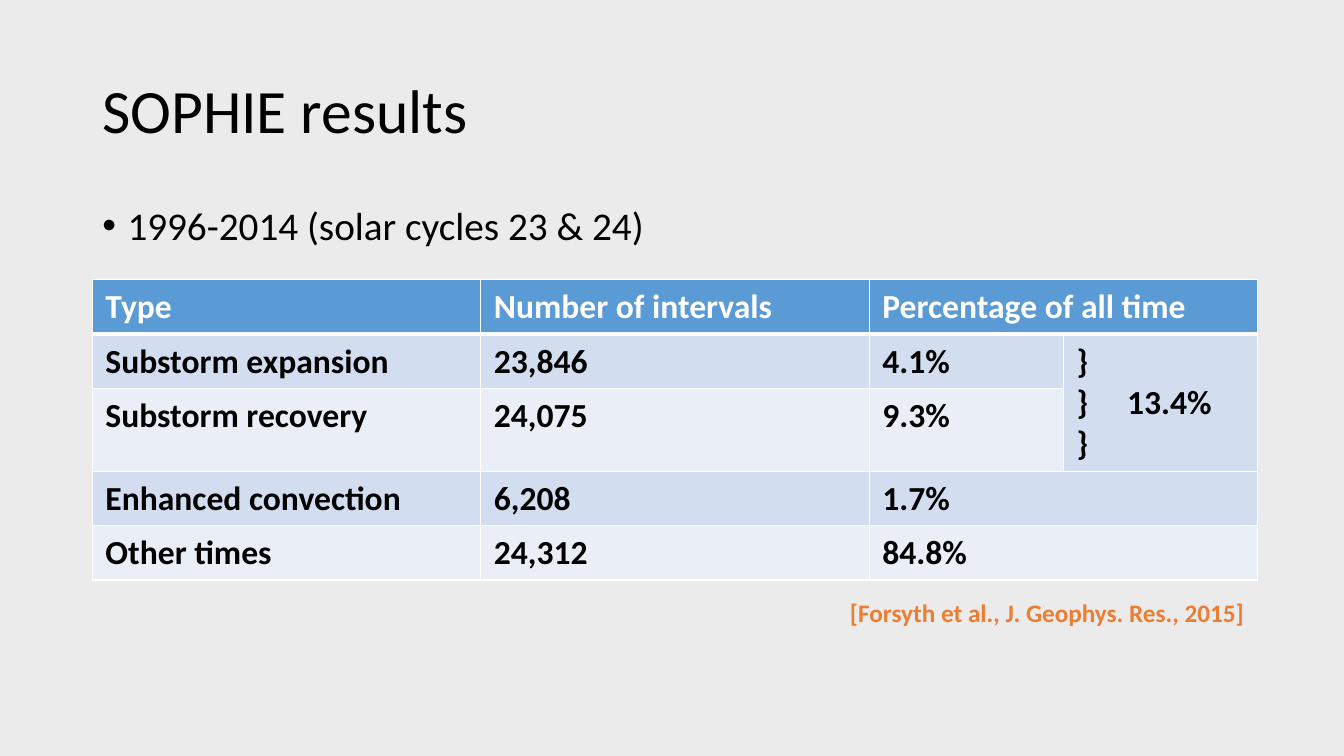
from lxml.etree import SubElement
from pptx import Presentation
from pptx.dml.color import RGBColor
from pptx.enum.text import MSO_ANCHOR, PP_ALIGN
from pptx.oxml.ns import qn
from pptx.util import Pt

COLORS = {
    "back": "EBEBEB",
    "ink": "000000",
    "white": "FFFFFF",
    "head": "5B9BD5",
    "odd": "D2DEEF",
    "even": "EAEFF7",
    "cite": "ED7D31",
}


def color(name):
    return RGBColor.from_string(COLORS[name])


def write(frame, text, size=24, ink="ink", bold=False, space=None,
          before=0, align=PP_ALIGN.LEFT, pad=(7.2, 3.6)):
    """Fill a text frame, one paragraph per line of text."""
    frame.text = text
    frame.margin_left = frame.margin_right = Pt(pad[0])
    frame.margin_top = frame.margin_bottom = Pt(pad[1])
    for para in frame.paragraphs:
        para.alignment = align
        para.space_before = Pt(before)
        para.line_spacing = space
        for run in para.runs:
            run.font.name = "Calibri"
            run.font.size = Pt(size)
            run.font.bold = bold
            run.font.color.rgb = color(ink)


deck = Presentation()
deck.slide_width, deck.slide_height = Pt(960), Pt(540)
slide = deck.slides.add_slide(deck.slide_layouts[6])
slide.background.fill.solid()
slide.background.fill.fore_color.rgb = color("back")

# Title
title = slide.shapes.add_textbox(Pt(66), Pt(28.8), Pt(828), Pt(104.4)).text_frame
title.word_wrap = True
title.vertical_anchor = MSO_ANCHOR.MIDDLE
write(title, "SOPHIE results", size=44, space=0.9)

# Bullet
body = slide.shapes.add_textbox(Pt(66), Pt(144), Pt(564), Pt(342)).text_frame
body.word_wrap = True
write(body, "1996-2014 (solar cycles 23 & 24)", size=28, space=0.9, before=10)
props = body.paragraphs[0]._p.get_or_add_pPr()
props.set("marL", str(Pt(18)))
props.set("indent", str(Pt(-18)))
SubElement(props, qn("a:buFont"), typeface="Arial")
SubElement(props, qn("a:buChar"), char="•")

# Table
rows = [
    ("Type", "Number of intervals", "Percentage of all time", ""),
    ("Substorm expansion", "23,846", "4.1%", "}\n}\t13.4%\n}"),
    ("Substorm recovery", "24,075", "9.3%", ""),
    ("Enhanced convection", "6,208", "1.7%", ""),
    ("Other times", "24,312", "84.8%", ""),
]
widths = [277.5, 277.5, 138.75, 138.75]
heights = [38.4, 38.4, 59, 38.4, 38.4]
table = slide.shapes.add_table(len(rows), len(widths), Pt(66), Pt(199.8),
                               Pt(sum(widths)), Pt(sum(heights))).table
for col, width in zip(table.columns, widths):
    col.width = Pt(width)
for row, height in zip(table.rows, heights):
    row.height = Pt(height)

for r, row in enumerate(rows):
    shade = "head" if r == 0 else "odd" if r % 2 else "even"
    for c, text in enumerate(row):
        cell = table.cell(r, c)
        # White borders, thicker under the header
        for side in "LRTB":
            thick = (r, side) in [(0, "B"), (1, "T")]
            line = SubElement(cell._tc.get_or_add_tcPr(), qn(f"a:ln{side}"),
                              w=str(Pt(3 if thick else 1)))
            paint = SubElement(line, qn("a:solidFill"))
            SubElement(paint, qn("a:srgbClr"), val=COLORS["white"])
        cell.fill.solid()
        cell.fill.fore_color.rgb = color(shade)
        if text:
            write(cell.text_frame, text, bold=True,
                  ink="ink" if r else "white")
        cell.margin_left = cell.margin_right = Pt(9.36)
        cell.margin_top = cell.margin_bottom = Pt(5.04)

# Merged cells
for r in (0, 3, 4):
    table.cell(r, 2).merge(table.cell(r, 3))
table.cell(1, 3).merge(table.cell(2, 3))

# Tab stop between the brace and the total
total = table.cell(1, 3).text_frame.paragraphs[1]
stops = SubElement(total._p.get_or_add_pPr(), qn("a:tabLst"))
SubElement(stops, qn("a:tab"), pos=str(Pt(36)), algn="l")

# Citation
cite = slide.shapes.add_textbox(Pt(600), Pt(423.4), Pt(298.8), Pt(29)).text_frame
cite.word_wrap = False
write(cite, "[Forsyth et al., J. Geophys. Res., 2015]", size=18, ink="cite", bold=True)

deck.save("out.pptx")
